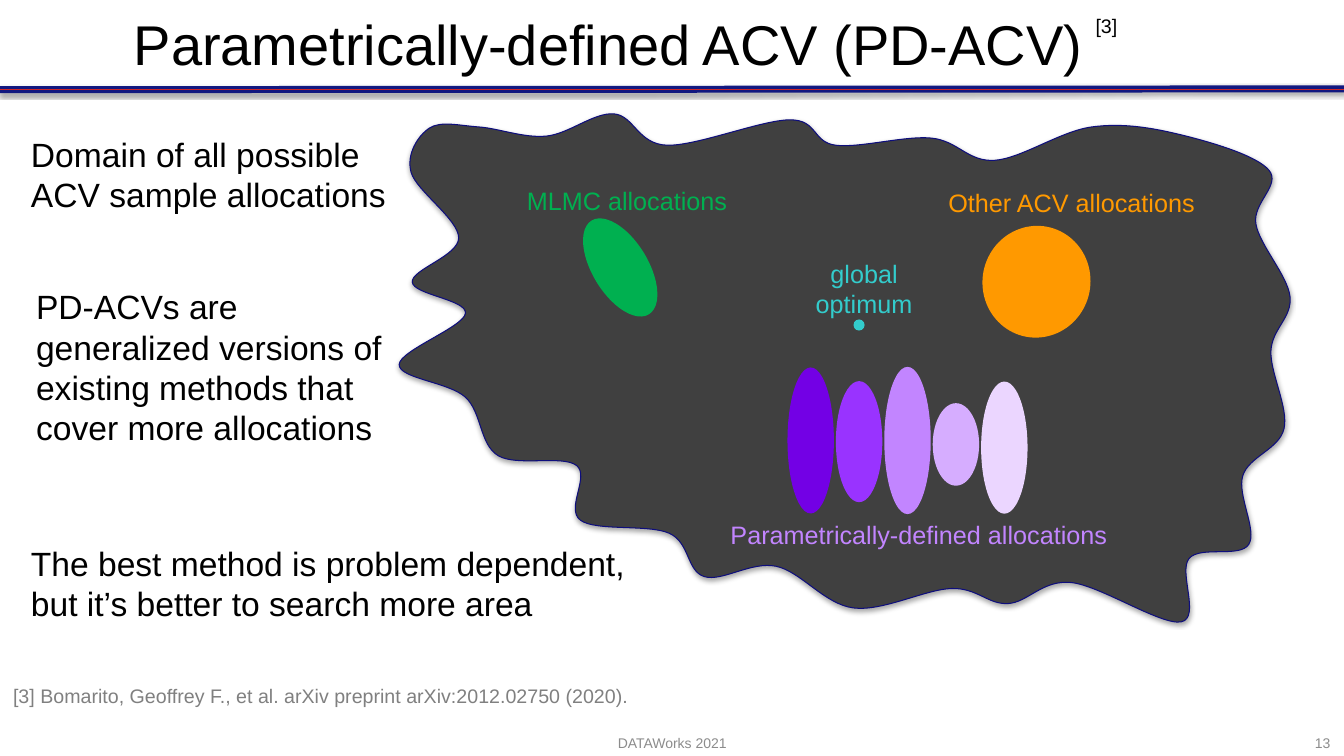
from dataclasses import dataclass

from lxml import etree
from pptx import Presentation
from pptx.dml.color import RGBColor
from pptx.enum import shapes, text
from pptx.oxml.ns import qn
from pptx.util import Cm, Pt

LEFT, CENTER, RIGHT = text.PP_ALIGN.LEFT, text.PP_ALIGN.CENTER, text.PP_ALIGN.RIGHT
TOP, MIDDLE, BOTTOM = (text.MSO_ANCHOR.TOP, text.MSO_ANCHOR.MIDDLE,
                       text.MSO_ANCHOR.BOTTOM)


@dataclass
class Label:
    lines: list[str]
    left: float
    top: float
    width: float
    height: float
    size: float = 24
    color: str = "000000"
    align: text.PP_ALIGN = LEFT
    anchor: text.MSO_ANCHOR = TOP
    wrap: bool = True


@dataclass
class Ellipse:
    """An allocation region given by its centre, in centimetres."""
    x: float
    y: float
    width: float
    height: float
    color: str
    rotation: float = 0


GREEN, ORANGE, TEAL, LILAC, GREY = "00B050", "FF9900", "33CCCC", "C285FF", "8C8C8C"

LABELS = [
    Label(["DATAWorks 2021"], 11.58, 18.03, 10.72, 1.02, 10, GREY, CENTER, BOTTOM),
    Label(["13"], 31.62, 18.03, 2.16, 1.02, 10, GREY, RIGHT, BOTTOM),
    Label(["Domain of all possible", "ACV sample allocations"], 0.53, 3.25, 9.78, 2.31),
    Label(["Other ACV allocations"], 23.65, 4.6, 6.78, 1.02, 18, ORANGE, wrap=False),
    Label(["MLMC allocations"], 13.03, 4.55, 5.61, 1.02, 18, GREEN, wrap=False),
    Label(["Parametrically-defined allocations"], 18.16, 12.95, 10.08, 1.02, 18, LILAC,
          wrap=False),
    Label(["global", "optimum"], 20.29, 6.38, 2.97, 1.8, 18, TEAL, CENTER, wrap=False),
    Label(["[3]"], 27.36, 0.23, 1.07, 0.86, 14, wrap=False),
    Label(["[3] Bomarito, Geoffrey F., et al. arXiv preprint arXiv:2012.02750 (2020)."],
          0.08, 17.12, 23.9, 0.86, 14, "808080"),
    Label(["The best method is problem dependent,", "but it’s better to search more area"],
          0.53, 13.56, 15.88, 2.31, wrap=False),
    Label(["PD-ACVs are generalized versions of existing methods that cover more allocations"],
          0.66, 7.09, 9.37, 4.37),
]

PARAMETRIC = [  # centre height, length, colour
    (11.1, 3.68, "7300E5"), (11.13, 3.05, "9933FF"), (11.1, 3.71, LILAC),
    (11.2, 2.08, "D6ADFF"), (11.28, 3.33, "EBD6FF"),
]
ELLIPSES = [
    Ellipse(15.63, 6.74, 2.77, 1.4, GREEN, 58.6),
    Ellipse(26.12, 7.1, 2.82, 2.72, ORANGE, 101.1),
    *(Ellipse(20.43 + 1.22 * i, y, length, 1.17, color, 90)
      for i, (y, length, color) in enumerate(PARAMETRIC)),
    Ellipse(21.65, 8.19, 0.28, 0.28, TEAL),
]

DOMAIN = [
    (12.07, 3.2), (13.77, 3.43), (15.47, 2.87), (16.81, 3.66), (19.91, 3.02),
    (21.06, 3.66), (23.47, 3.48), (25.07, 4.04), (27.51, 3.2), (29.77, 3.4),
    (31.98, 4.29), (31.65, 5.64), (32.51, 7.47), (32.03, 8.84), (32.36, 10.8),
    (31.32, 11.99), (31.47, 13.72), (29.97, 14.07), (29.77, 15.67), (27, 14.68),
    (25.4, 15.21), (23.98, 14.83), (21.51, 15.32), (19.56, 14.27), (17.75, 14.53),
    (16.87, 13.44), (14.63, 13.11), (14.53, 11.73), (12.55, 11.48), (11.73, 10.01),
    (10.06, 9.19), (11.73, 7.9), (10.39, 7.11), (11.56, 5.99), (10.36, 4.34),
    (10.82, 3.23),
]


def rgb(color: str) -> RGBColor:
    return RGBColor.from_string(color)


def write(box, lines: list[str], *, size: float, color: str = "000000",
          align=LEFT, anchor=TOP, wrap: bool = True) -> None:
    frame = box.text_frame
    frame.word_wrap = wrap
    frame.auto_size = text.MSO_AUTO_SIZE.NONE
    frame.vertical_anchor = anchor
    for i, line in enumerate(lines):
        para = frame.add_paragraph() if i else frame.paragraphs[0]
        para.alignment = align
        span = para.add_run()
        span.text = line
        span.font.name = "Arial"
        span.font.size = Pt(size)
        span.font.color.rgb = rgb(color)


def cast_shadow(shape, distance: float, opacity: int) -> None:
    """Give a shape a soft black shadow straight below it."""
    effects = etree.SubElement(shape._element.spPr, qn("a:effectLst"))
    shadow = etree.SubElement(effects, qn("a:outerShdw"), blurRad=str(Pt(3.1)),
                              dist=str(Pt(distance)), dir="5400000", rotWithShape="0")
    black = etree.SubElement(shadow, qn("a:srgbClr"), val="000000")
    etree.SubElement(black, qn("a:alpha"), val=str(opacity * 1000))


def add_rule(page, y_start: float, y_end: float, color: str, width: float) -> None:
    rule = page.shapes.add_connector(shapes.MSO_CONNECTOR.STRAIGHT, Cm(0), Cm(y_start),
                                     Cm(33.87), Cm(y_end))
    rule.line.color.rgb = rgb(color)
    rule.line.width = Pt(width)
    cast_shadow(rule, 1.6, 38)


def round_corners(shape) -> None:
    """Turn a closed outline's straight sides into a smooth curve through its corners."""
    sides = list(shape._element.iter(qn("a:lnTo")))
    ends = [(int(side[0].get("x")), int(side[0].get("y"))) for side in sides]
    count = len(ends)
    for i, side in enumerate(sides):
        before, start, end, after = (ends[(i + step) % count] for step in (-2, -1, 0, 1))
        leave = [s + (e - b) / 6 for b, s, e in zip(before, start, end)]
        arrive = [e - (a - s) / 6 for s, e, a in zip(start, end, after)]
        curve = etree.Element(qn("a:cubicBezTo"))
        for x, y in (leave, arrive, end):
            etree.SubElement(curve, qn("a:pt"), x=str(round(x)), y=str(round(y)))
        side.getparent().replace(side, curve)


def add_domain(page) -> None:
    corners = [(Cm(x), Cm(y)) for x, y in DOMAIN]
    builder = page.shapes.build_freeform(*corners[0])
    builder.add_line_segments(corners[1:] + corners[:1], close=True)
    domain = builder.convert_to_shape()
    round_corners(domain)
    domain.fill.solid()
    domain.fill.fore_color.rgb = rgb("404040")
    domain.line.color.rgb = rgb("0E0E7D")
    domain.line.width = Pt(0.75)
    cast_shadow(domain, 1.8, 35)


def add_ellipse(page, item: Ellipse) -> None:
    ellipse = page.shapes.add_shape(
        shapes.MSO_SHAPE.OVAL, Cm(item.x - item.width / 2), Cm(item.y - item.height / 2),
        Cm(item.width), Cm(item.height))
    ellipse.rotation = item.rotation
    ellipse.shadow.inherit = False
    ellipse.fill.solid()
    ellipse.fill.fore_color.rgb = rgb(item.color)
    ellipse.line.fill.background()


def add_label(page, label: Label) -> None:
    box = page.shapes.add_textbox(Cm(label.left), Cm(label.top), Cm(label.width),
                                  Cm(label.height))
    write(box, label.lines, size=label.size, color=label.color, align=label.align,
          anchor=label.anchor, wrap=label.wrap)


def main() -> None:
    deck = Presentation()
    deck.slide_width, deck.slide_height = Cm(33.87), Cm(19.05)
    page = deck.slides.add_slide(deck.slide_layouts[5])
    add_rule(page, 2.26, 2.24, "121981", 5)
    add_rule(page, 2.26, 2.26, "D02626", 1)

    title = page.shapes.title
    title.left, title.top, title.width, title.height = Cm(0.08), Cm(0), Cm(30.48), Cm(2.18)
    write(title, ["Parametrically-defined ACV (PD-ACV)"], size=40, align=CENTER,
          anchor=MIDDLE)

    add_domain(page)
    for ellipse in ELLIPSES:
        add_ellipse(page, ellipse)
    for label in LABELS:
        add_label(page, label)
    deck.save("out.pptx")


if __name__ == "__main__":
    main()
